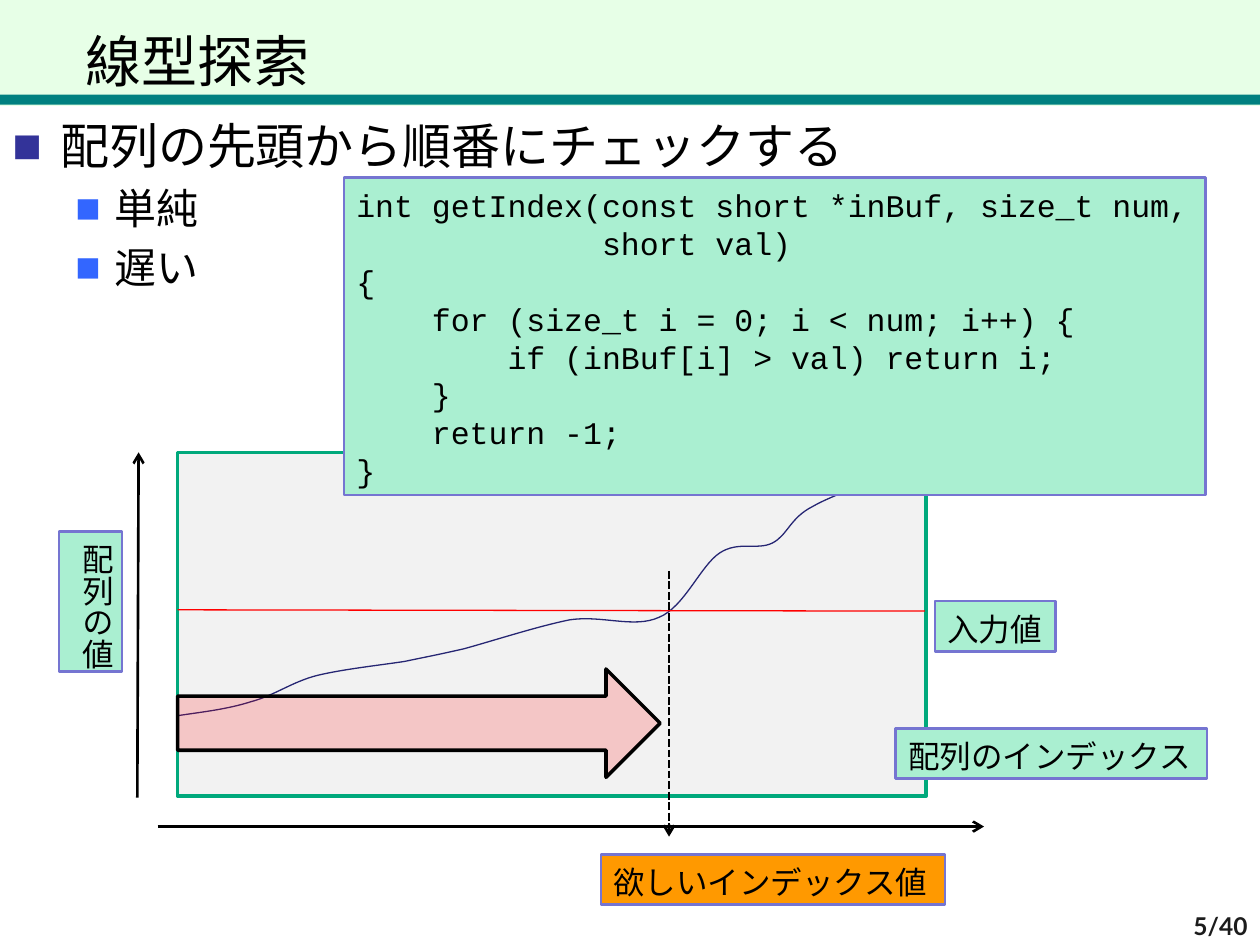
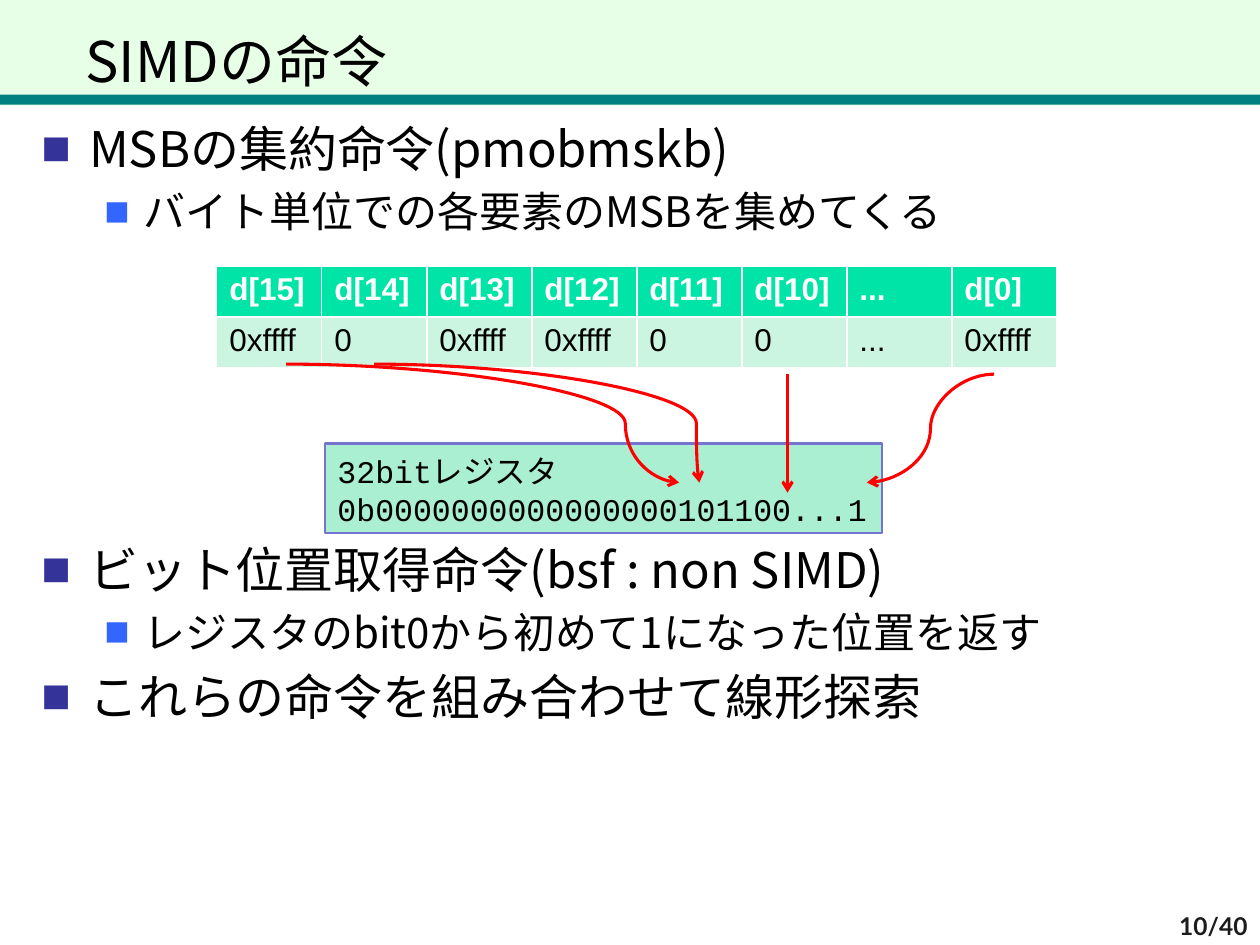
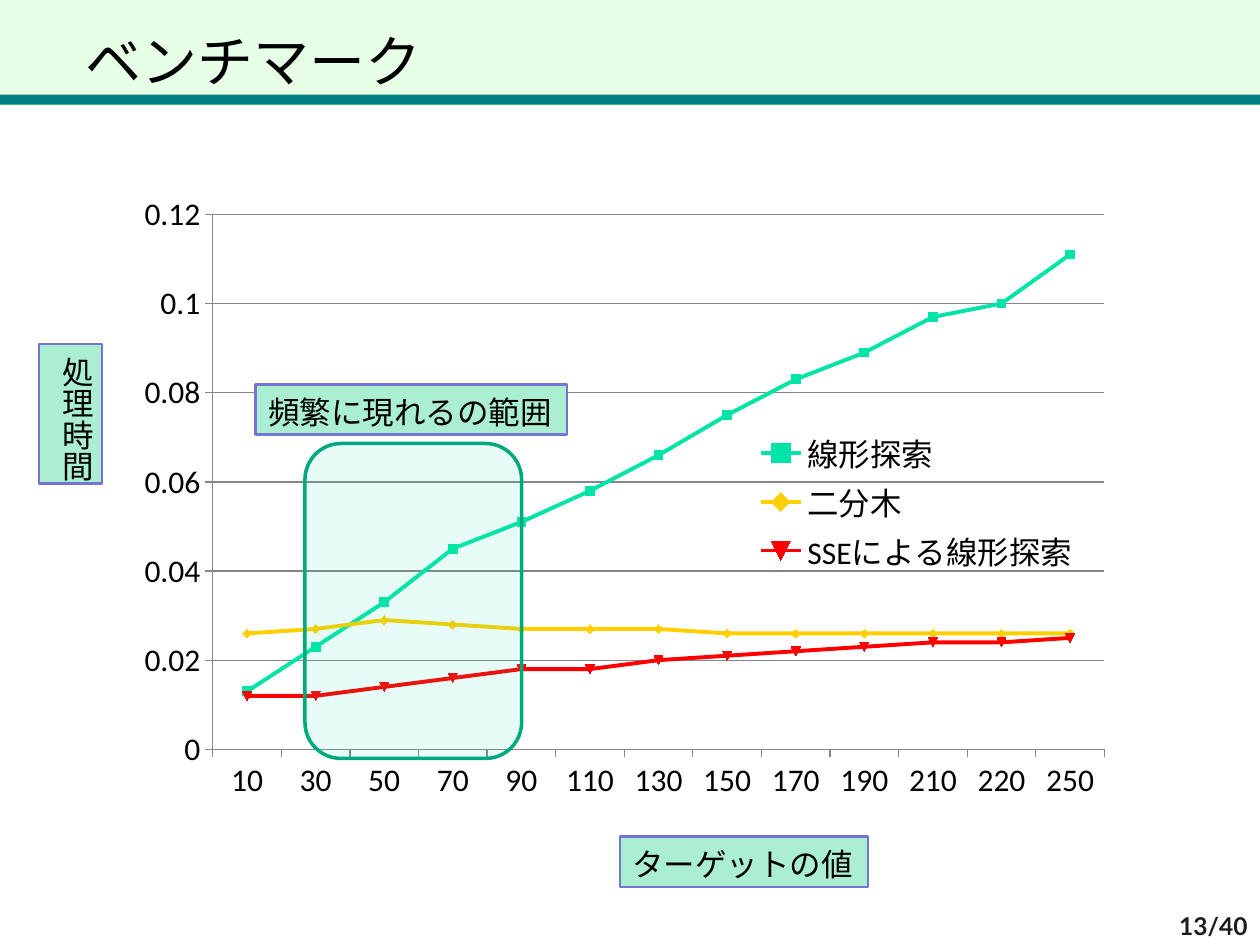
from dataclasses import dataclass

from lxml import etree
from pptx import Presentation, util as u
from pptx.chart.data import CategoryChartData
from pptx.dml.color import RGBColor
from pptx.enum import chart as charts, dml, shapes, text
from pptx.oxml import parse_xml
from pptx.oxml.ns import nsdecls, qn


@dataclass(frozen=True)
class Theme:
    black: str = "000000"
    white: str = "FFFFFF"
    band: str = "E7FFE7"
    rule: str = "008080"
    number: str = "1C1C1C"
    bullets: tuple = ("333399", "3366FF")
    label: str = "AAEFD1"
    label_line: str = "7575D1"
    target: str = "FF9900"
    plot: str = "F2F2F2"
    frame: str = "00A97C"
    curve: str = "262673"
    red: str = "FF0000"
    green: str = "00E4A8"
    yellow: str = "FFCF01"
    pale: str = "CCF5E1"
    grid: str = "868686"
    title_size: int = 32
    body_sizes: tuple = (28, 24)
    label_size: int = 18
    number_size: int = 14
    sans: str = "Noto Sans CJK JP"
    mono: str = "Courier New"
    cell: str = "Arial"
    chart: str = "Calibri"
    footer: str = "Lato"


theme = Theme()


def paint(shape, fill=None, line=None, width=1.5, alpha=None):
    """Set fill, outline and opacity (percent); no colour means none."""
    shape.shadow.inherit = False
    if fill:
        shape.fill.solid()
        shape.fill.fore_color.rgb = RGBColor.from_string(fill)
        if alpha:
            colour = shape._element.spPr.find(qn("a:solidFill"))[0]
            etree.SubElement(colour, qn("a:alpha"), val=str(alpha * 1000))
    else:
        shape.fill.background()
    if line:
        shape.line.color.rgb = RGBColor.from_string(line)
        shape.line.width = u.Pt(width)
    else:
        shape.line.fill.background()


def write(shape, rows, font=theme.sans, align=text.PP_ALIGN.LEFT, bold=False,
          colour=theme.black, **frame_format):
    """Fill a shape with rows of (words, size, bullet level or None)."""
    frame = shape.text_frame
    drop = u.Pt(rows[0][1] * 0.075)
    frame_format = {"vertical_anchor": text.MSO_ANCHOR.TOP, "word_wrap": True,
                    "margin_top": u.Inches(0.05) + drop,
                    "margin_bottom": u.Inches(0.05) - drop} | frame_format
    for name, value in frame_format.items():
        setattr(frame, name, value)
    for index, (words, size, level) in enumerate(rows):
        para = frame.add_paragraph() if index else frame.paragraphs[0]
        para.alignment = align
        para.line_spacing = u.Pt(size * 1.2)
        if level is not None:
            para.level = level
            properties = para._p.get_or_add_pPr()
            properties.set("marL", str(u.Inches((0.38, 0.81)[level])))
            properties.set("indent", str(u.Inches((-0.38, -0.31)[level])))
            bullet_colour = etree.SubElement(properties, qn("a:buClr"))
            etree.SubElement(bullet_colour, qn("a:srgbClr"), val=theme.bullets[level])
            etree.SubElement(properties, qn("a:buFont"), typeface=theme.cell)
            etree.SubElement(properties, qn("a:buChar"), char="■")
            if index:
                para.space_before = u.Pt(size * 0.2)
        span = para.add_run()
        span.text = words
        for name, value in {"name": font, "size": u.Pt(size), "bold": bold}.items():
            setattr(span.font, name, value)
        span.font.color.rgb = RGBColor.from_string(colour)
        etree.SubElement(span._r.get_or_add_rPr(), qn("a:ea"), typeface=theme.sans)


deck = Presentation()
deck.slide_width, deck.slide_height = u.Inches(10), u.Inches(7.5)

# Shared bands, titles, page numbers and bullet text
contents = [
    ("線型探索", "5/40", [
        (0, 0.84, [("配列の先頭から順番にチェックする", 0), ("単純", 1), ("遅い", 1)])]),
    ("SIMDの命令", "10/40", [
        (0.23, 0.86, [("MSBの集約命令(pmobmskb)", 0),
                      ("バイト単位での各要素のMSBを集めてくる", 1)]),
        (0.23, 4.2, [("ビット位置取得命令(bsf : non SIMD)", 0),
                     ("レジスタのbit0から初めて1になった位置を返す", 1),
                     ("これらの命令を組み合わせて線形探索", 0)])]),
    ("ベンチマーク", "13/40", []),
]
pages = []
for title, number, bodies in contents:
    page = deck.slides.add_slide(deck.slide_layouts[6])
    pages.append(page)
    for top, height, colour in ((0, 0.84, theme.band), (0.75, 0.08, theme.rule)):
        band = page.shapes.add_shape(shapes.MSO_SHAPE.RECTANGLE, 0, u.Inches(top),
                                     deck.slide_width, u.Inches(height))
        paint(band, colour)
    box = page.shapes.add_textbox(*map(u.Inches, (0.58, 0, 9.42, 0.76)))
    write(box, [(title, theme.title_size, None)], vertical_anchor=text.MSO_ANCHOR.BOTTOM)
    for left, top, rows in bodies:
        box = page.shapes.add_textbox(*map(u.Inches, (left, top, 10 - left, 2)))
        write(box, [(words, theme.body_sizes[level], level) for words, level in rows])
    box = page.shapes.add_textbox(*map(u.Inches, (7.92, 7.17, 2.08, 0.33)))
    write(box, [(number, theme.number_size, None)], theme.footer, text.PP_ALIGN.RIGHT,
          True, theme.number, vertical_anchor=text.MSO_ANCHOR.BOTTOM)
search, simd, benchmark = pages

# Array plot: frame and rising curve
plot = search.shapes.add_shape(shapes.MSO_SHAPE.RECTANGLE,
                               *map(u.Inches, (1.41, 3.59, 5.94, 2.73)))
paint(plot, theme.plot, theme.frame, 2)

curve_points = [
    (1.61, 5.65), (1.8, 5.63), (1.99, 5.57), (2.18, 5.52), (2.32, 5.41), (2.52, 5.36),
    (2.73, 5.31), (3.01, 5.28), (3.21, 5.25), (3.4, 5.21), (3.46, 5.2), (3.68, 5.15),
    (3.9, 5.09), (4.27, 4.97), (4.52, 4.92), (4.78, 4.88), (5.03, 4.99), (5.23, 4.9),
    (5.43, 4.82), (5.56, 4.49), (5.71, 4.39), (5.86, 4.29), (6.01, 4.37), (6.13, 4.31),
    (6.25, 4.25), (6.27, 4.11), (6.45, 4.02), (6.62, 3.92), (7.07, 3.77), (7.2, 3.72),
    (7.33, 3.67), (7.27, 3.69), (7.22, 3.7)]
builder = search.shapes.build_freeform(u.Inches(1.41), u.Inches(5.68))
builder.add_line_segments([(u.Inches(x), u.Inches(y)) for x, y in curve_points], close=False)
values_curve = builder.convert_to_shape()
paint(values_curve, None, theme.curve, 0.75)
# Every three points become the controls and the end of one Bezier segment
segments = list(values_curve._element.iter(qn("a:lnTo")))
outline = segments[0].getparent()
for start in range(0, len(segments), 3):
    bezier = etree.SubElement(outline, qn("a:cubicBezTo"))
    for segment in segments[start:start + 3]:
        bezier.append(segment[0])
        outline.remove(segment)

scan = search.shapes.add_shape(shapes.MSO_SHAPE.RIGHT_ARROW,
                               *map(u.Inches, (1.41, 5.31, 3.83, 0.86)))
paint(scan, theme.red, theme.black, 2, 18)

# Byte table
table_rows = [
    ["d[15]", "d[14]", "d[13]", "d[12]", "d[11]", "d[10]", "...", "d[0]"],
    ["0xffff", "0", "0xffff", "0xffff", "0", "0", "...", "0xffff"],
]
row_formats = [(theme.green, theme.white, True), (theme.pale, theme.black, False)]
table = simd.shapes.add_table(2, 8, *map(u.Inches, (1.72, 2.11, 6.67, 0.81))).table
for row, (words, (fill, colour, bold)) in enumerate(zip(table_rows, row_formats)):
    for column, word in enumerate(words):
        cell = table.cell(row, column)
        cell.fill.solid()
        cell.fill.fore_color.rgb = RGBColor.from_string(fill)
        para = cell.text_frame.paragraphs[0]
        span = para.add_run()
        span.text = word
        for name, value in {"name": theme.cell, "size": u.Pt(theme.label_size),
                            "bold": bold}.items():
            setattr(span.font, name, value)
        span.font.color.rgb = RGBColor.from_string(colour)

# Benchmark chart
timings = CategoryChartData()
timings.categories = ["10", "30", "50", "70", "90", "110", "130", "150", "170", "190",
                      "210", "220", "250"]
timings.add_series("線形探索", [0.013, 0.023, 0.033, 0.045, 0.051, 0.058, 0.066, 0.075,
                            0.083, 0.089, 0.097, 0.1, 0.111])
timings.add_series("二分木", [0.026, 0.027, 0.029, 0.028, 0.027, 0.027, 0.027, 0.026,
                           0.026, 0.026, 0.026, 0.026, 0.026])
timings.add_series("SSEによる線形探索", [0.012, 0.012, 0.014, 0.016, 0.018, 0.018, 0.02,
                                  0.021, 0.022, 0.023, 0.024, 0.024, 0.025])
chart = benchmark.shapes.add_chart(charts.XL_CHART_TYPE.LINE_MARKERS,
                                   *map(u.Inches, (0.86, 1.48, 7.97, 5.16)), timings).chart
chart.font.name, chart.font.size = theme.chart, u.Pt(theme.label_size)
chart.font.color.rgb = RGBColor.from_string(theme.black)
chart.has_title = False
chart.has_legend = True
chart.legend.position = charts.XL_LEGEND_POSITION.RIGHT
chart.legend.include_in_layout = False
chart.plots[0].vary_by_categories = False
for series, colour in zip(chart.plots[0].series, (theme.green, theme.yellow, theme.red)):
    rgb = RGBColor.from_string(colour)
    series.smooth = False
    series.format.line.color.rgb = rgb
    series.format.line.width = u.Pt(2.25)
    series.marker.style = charts.XL_MARKER_STYLE.AUTOMATIC
    series.marker.size = 5
    series.marker.format.fill.solid()
    series.marker.format.fill.fore_color.rgb = rgb
    series.marker.format.line.color.rgb = rgb
axis = chart.value_axis
for name, value in {"minimum_scale": 0, "maximum_scale": 0.12, "major_unit": 0.02,
                    "has_major_gridlines": True}.items():
    setattr(axis, name, value)
axis.tick_labels.number_format = "General"
axis.tick_labels.number_format_is_linked = False
for line_format in (axis.format, chart.category_axis.format, axis.major_gridlines.format):
    line_format.line.color.rgb = RGBColor.from_string(theme.grid)
    line_format.line.width = u.Pt(0.75)

plot_area = chart._chartSpace.chart.plotArea
legend = chart.legend._element
for parent, target, extent in (
        (plot_area, '<c:layoutTarget val="inner"/>', (0.104, 0.043, 0.888, 0.823)),
        (legend, "", (0.61, 0.37, 0.41, 0.23))):
    for old in parent.findall(qn("c:layout")):
        parent.remove(old)
    sizes = "".join(f'<c:{name} val="{value}"/>' for name, value in zip("xywh", extent))
    layout = parse_xml(f'<c:layout {nsdecls("c")}><c:manualLayout>{target}'
                       f'<c:xMode val="edge"/><c:yMode val="edge"/>{sizes}'
                       '</c:manualLayout></c:layout>')
    parent.insert(0 if parent is plot_area else 1, layout)

frequent = benchmark.shapes.add_shape(shapes.MSO_SHAPE.ROUNDED_RECTANGLE,
                                      *map(u.Inches, (2.42, 3.52, 1.72, 2.5)))
paint(frequent, theme.green, theme.frame, 2, 9)

# Labels and code boxes
code = """int getIndex(const short *inBuf, size_t num,
             short val)
{
    for (size_t i = 0; i < num; i++) {
        if (inBuf[i] > val) return i;
    }
    return -1;
}"""
register = "32bitレジスタ\n0b0000000000000000101100...1"
labels = [
    (search, (7.11, 5.78, 2.47, 0.4), "配列のインデックス", theme.sans, theme.label),
    (search, (0.47, 4.22, 0.5, 1.11), "配列の値", theme.sans, theme.label),
    (search, (7.42, 4.77, 0.96, 0.4), "入力値", theme.sans, theme.label),
    (search, (4.77, 6.78, 2.73, 0.4), "欲しいインデックス値", theme.sans, theme.target),
    (search, (2.73, 1.41, 6.84, 2.52), code, theme.mono, theme.label),
    (simd, (2.58, 3.52, 4.42, 0.71), register, theme.mono, theme.label),
    (benchmark, (0.31, 2.73, 0.5, 1.11), "処理時間", theme.mono, theme.label),
    (benchmark, (4.92, 6.64, 1.97, 0.4), "ターゲットの値", theme.mono, theme.label),
    (benchmark, (2.03, 3.05, 2.47, 0.4), "頻繁に現れるの範囲", theme.mono, theme.label),
]
for page, place, words, font, fill in labels:
    label = page.shapes.add_shape(shapes.MSO_SHAPE.RECTANGLE, *map(u.Inches, place))
    paint(label, fill, theme.label_line)
    frame_format = {"word_wrap": False, "auto_size": text.MSO_AUTO_SIZE.SHAPE_TO_FIT_TEXT}
    if place[3] > place[2]:
        label.text_frame._txBody.bodyPr.set("vert", "eaVert")
        frame_format |= {"margin_top": u.Inches(0.05), "margin_bottom": u.Inches(0.05)}
    write(label, [(row, theme.label_size, None) for row in words.split("\n")], font,
          **frame_format)

# Axes, guides and bit arrows: page, ends, colour, width, arrowhead, dash, bend
solid, dashed = dml.MSO_LINE.SOLID, dml.MSO_LINE.SQUARE_DOT
connectors = [
    (search, (1.41, 4.84, 7.34, 4.85), theme.red, 0.75, False, solid, None),
    (search, (1.09, 6.33, 1.1, 3.59), theme.black, 1.5, True, solid, None),
    (search, (1.25, 6.56, 7.81, 6.56), theme.black, 1.5, True, solid, None),
    (search, (5.31, 4.53, 5.31, 6.64), theme.black, 1.5, True, dashed, None),
    (simd, (2.27, 2.89, 5.39, 3.83), theme.red, 1.75, True, solid, 86300),
    (simd, (2.97, 2.89, 5.55, 3.83), theme.red, 1.75, True, solid, 99100),
    (simd, (7.89, 2.97, 6.88, 3.83), theme.red, 1.75, True, solid, 50000),
    (simd, (6.25, 2.97, 6.25, 3.91), theme.red, 1.75, True, solid, None),
]
for page, ends, colour, width, arrowhead, dash, bend in connectors:
    kind = shapes.MSO_CONNECTOR.CURVE if bend else shapes.MSO_CONNECTOR.STRAIGHT
    connector = page.shapes.add_connector(kind, *map(u.Inches, ends))
    connector.line.color.rgb = RGBColor.from_string(colour)
    connector.line.width = u.Pt(width)
    connector.line.dash_style = dash
    properties = connector._element.spPr
    if arrowhead:
        etree.SubElement(properties.find(qn("a:ln")), qn("a:tailEnd"), type="arrow")
    if bend:
        adjustments = properties.find(qn("a:prstGeom")).find(qn("a:avLst"))
        etree.SubElement(adjustments, qn("a:gd"), name="adj1", fmla=f"val {bend}")
    etree.SubElement(properties, qn("a:effectLst"))

deck.save("out.pptx")
